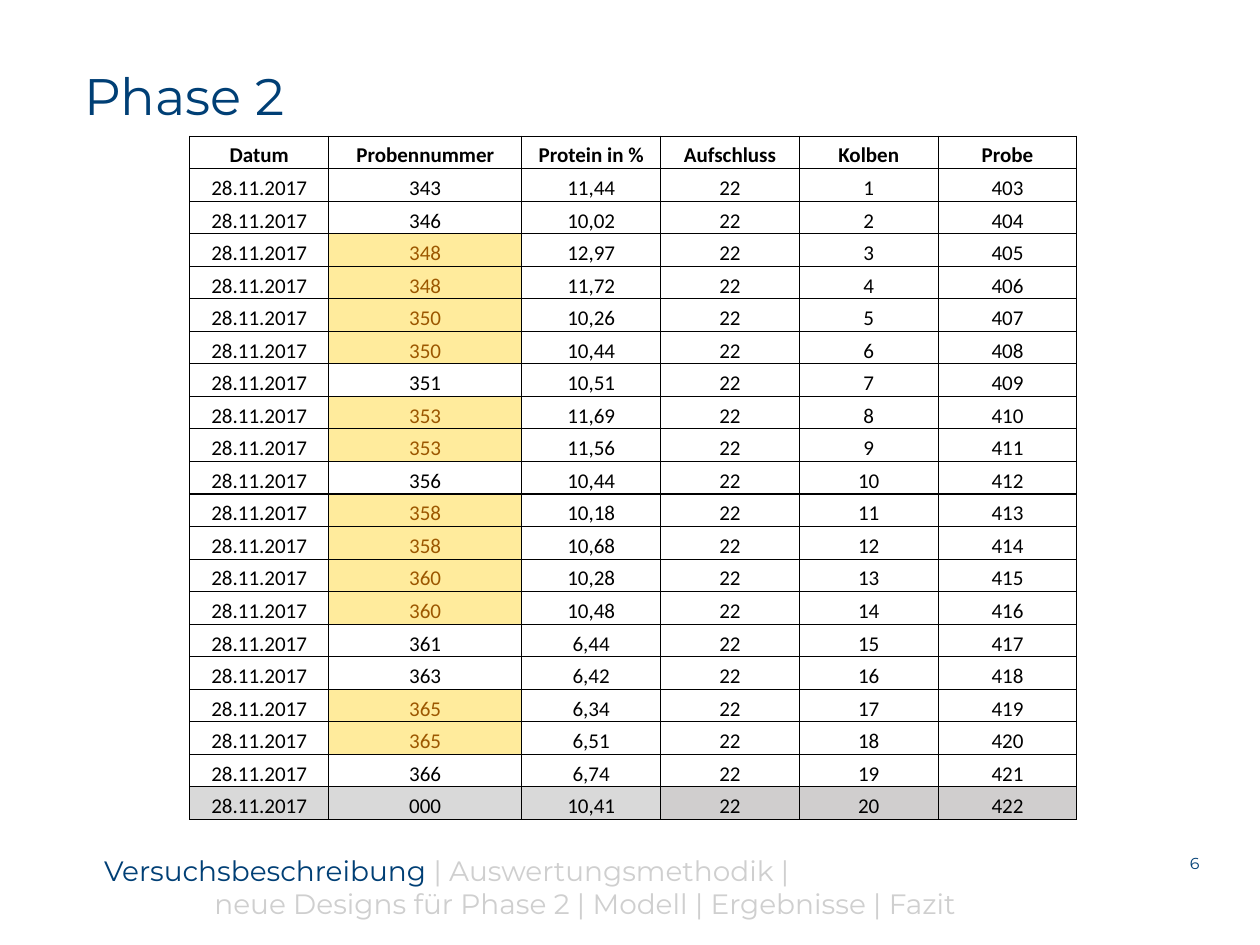
from collections import Counter

from lxml import etree
from pptx import Presentation
from pptx import util as u
from pptx.dml.color import RGBColor
from pptx.enum import text as t
from pptx.oxml import ns

COLORS = {"navy": "003F75", "muted": "CFCFCF", "black": "000000", "amber": "FFEB9C",
          "brown": "9C5700", "gray": "D9D9D9", "warm_gray": "D0CECE"}
HEADING_FONT, TABLE_FONT = "Montserrat", "Calibri"
SLIDE_WIDTH = 7.5
SLIDE_HEIGHT = SLIDE_WIDTH * 3 / 4

HEADERS = ["Datum", "Probennummer", "Protein in %", "Aufschluss", "Kolben", "Probe"]
WIDE_COLUMN = 1.15
DATE, DIGESTION, FIRST_PROBE = "28.11.2017", "22", 403
SAMPLES = [
    ("343", "11,44"), ("346", "10,02"), ("348", "12,97"), ("348", "11,72"),
    ("350", "10,26"), ("350", "10,44"), ("351", "10,51"), ("353", "11,69"),
    ("353", "11,56"), ("356", "10,44"), ("358", "10,18"), ("358", "10,68"),
    ("360", "10,28"), ("360", "10,48"), ("361", "6,44"), ("363", "6,42"),
    ("365", "6,34"), ("365", "6,51"), ("366", "6,74"), ("000", "10,41"),
]


def place(shape, box):
    """Move a shape to a box of left, top, width and height in inches."""
    shape.left, shape.top, shape.width, shape.height = map(u.Inches, box)


def set_frame(frame, left=0, top=0):
    """Give a text frame fixed size, wrapping and top-left insets."""
    frame.auto_size = t.MSO_AUTO_SIZE.NONE
    frame.word_wrap = True
    frame.vertical_anchor = t.MSO_ANCHOR.TOP
    frame.margin_left, frame.margin_top = u.Inches(left), u.Inches(top)
    frame.margin_right = frame.margin_bottom = 0


def add_run(paragraph, text, size, color, font=HEADING_FONT, bold=False):
    """Append one formatted run to a paragraph."""
    run = paragraph.add_run()
    run.text = text
    run.font.size, run.font.name, run.font.bold = u.Pt(size), font, bold
    run.font.color.rgb = RGBColor.from_string(COLORS[color])


def set_paragraph(paragraph, alignment, indent=0):
    """Align a paragraph without bullet or spacing before it."""
    paragraph.alignment = alignment
    paragraph.space_before = u.Pt(0)
    properties = paragraph._p.get_or_add_pPr()
    properties.set("marL", str(u.Inches(indent)))
    properties.set("indent", "0")
    etree.SubElement(properties, ns.qn("a:buNone"))


def add_title(slide, box):
    """Fill the title placeholder."""
    title = slide.shapes.title
    place(title, box)
    set_frame(title.text_frame, left=0.1, top=0.05)
    paragraph = title.text_frame.paragraphs[0]
    set_paragraph(paragraph, t.PP_ALIGN.LEFT)
    add_run(paragraph, "Phase 2", 22, "navy")


def add_agenda(slide, box):
    """Fill the body placeholder with the agenda, current section highlighted."""
    agenda = slide.placeholders[1]
    place(agenda, box)
    frame = agenda.text_frame
    set_frame(frame, top=0.05)
    frame.margin_right = u.Inches(0.06)
    first, second = frame.paragraphs[0], frame.add_paragraph()
    set_paragraph(first, t.PP_ALIGN.LEFT, indent=0.24)
    add_run(first, "Versuchsbeschreibung ", 12, "navy")
    add_run(first, "| Auswertungsmethodik |", 12, "muted")
    set_paragraph(second, t.PP_ALIGN.CENTER)
    add_run(second, "neue Designs für Phase 2 | Modell | Ergebnisse | Fazit", 12, "muted")


def add_page_number(slide, box):
    """Add the page number at the lower right."""
    number = slide.shapes.add_textbox(*map(u.Inches, box))
    set_frame(number.text_frame)
    paragraph = number.text_frame.paragraphs[0]
    paragraph.alignment = t.PP_ALIGN.RIGHT
    add_run(paragraph, "6", 6.8, "navy")


def add_borders(cell):
    """Draw a thin black line on each side of a cell."""
    properties = cell._tc.get_or_add_tcPr()
    for side in ("a:lnL", "a:lnR", "a:lnT", "a:lnB"):
        line = etree.SubElement(properties, ns.qn(side), w=str(u.Pt(0.5)))
        fill = etree.SubElement(line, ns.qn("a:solidFill"))
        etree.SubElement(fill, ns.qn("a:srgbClr"), val=COLORS["black"])


def fill_cell(cell, text, fill=None, color="black", bold=False):
    """Write and format one table cell."""
    cell.margin_left = cell.margin_right = cell.margin_top = cell.margin_bottom = 0
    cell.vertical_anchor = t.MSO_ANCHOR.BOTTOM
    add_borders(cell)
    if fill:
        cell.fill.solid()
        cell.fill.fore_color.rgb = RGBColor.from_string(COLORS[fill])
    else:
        cell.fill.background()
    paragraph = cell.text_frame.paragraphs[0]
    paragraph.alignment = t.PP_ALIGN.CENTER
    add_run(paragraph, text, 9, color, TABLE_FONT, bold)


def add_sample_table(slide, box):
    """Add the sample table, marking repeated samples and the blank sample."""
    row_count, column_count = len(SAMPLES) + 1, len(HEADERS)
    table = slide.shapes.add_table(row_count, column_count, *map(u.Inches, box)).table
    table.first_row = table.horz_banding = False
    for column in table.columns:
        column.width = u.Inches((box[2] - WIDE_COLUMN) / (column_count - 1))
    table.columns[1].width = u.Inches(WIDE_COLUMN)
    for row in table.rows:
        row.height = u.Inches(box[3] / row_count)
    for column, header in enumerate(HEADERS):
        fill_cell(table.cell(0, column), header, bold=True)

    counts = Counter(sample for sample, _ in SAMPLES)
    for flask, (sample, protein) in enumerate(SAMPLES, start=1):
        values = [DATE, sample, protein, DIGESTION, str(flask), str(FIRST_PROBE + flask - 1)]
        for column, value in enumerate(values):
            fill, color = None, "black"
            if sample == "000":
                fill = "gray" if column < 3 else "warm_gray"
            elif column == 1 and counts[sample] > 1:
                fill, color = "amber", "brown"
            fill_cell(table.cell(flask, column), value, fill, color)


def main():
    """Build and save the presentation."""
    presentation = Presentation()
    presentation.slide_width = u.Inches(SLIDE_WIDTH)
    presentation.slide_height = u.Inches(SLIDE_HEIGHT)
    slide = presentation.slides.add_slide(presentation.slide_layouts[1])
    add_title(slide, (0.4, 0.33, 6.75, 0.47))
    add_agenda(slide, (0.38, 5.03, 6.27, 0.2))
    add_page_number(slide, (6.76, 5.08, 0.38, 0.11))
    add_sample_table(slide, (1.13, 0.81, 5.28, 4.07))
    presentation.save("out.pptx")


if __name__ == "__main__":
    main()
